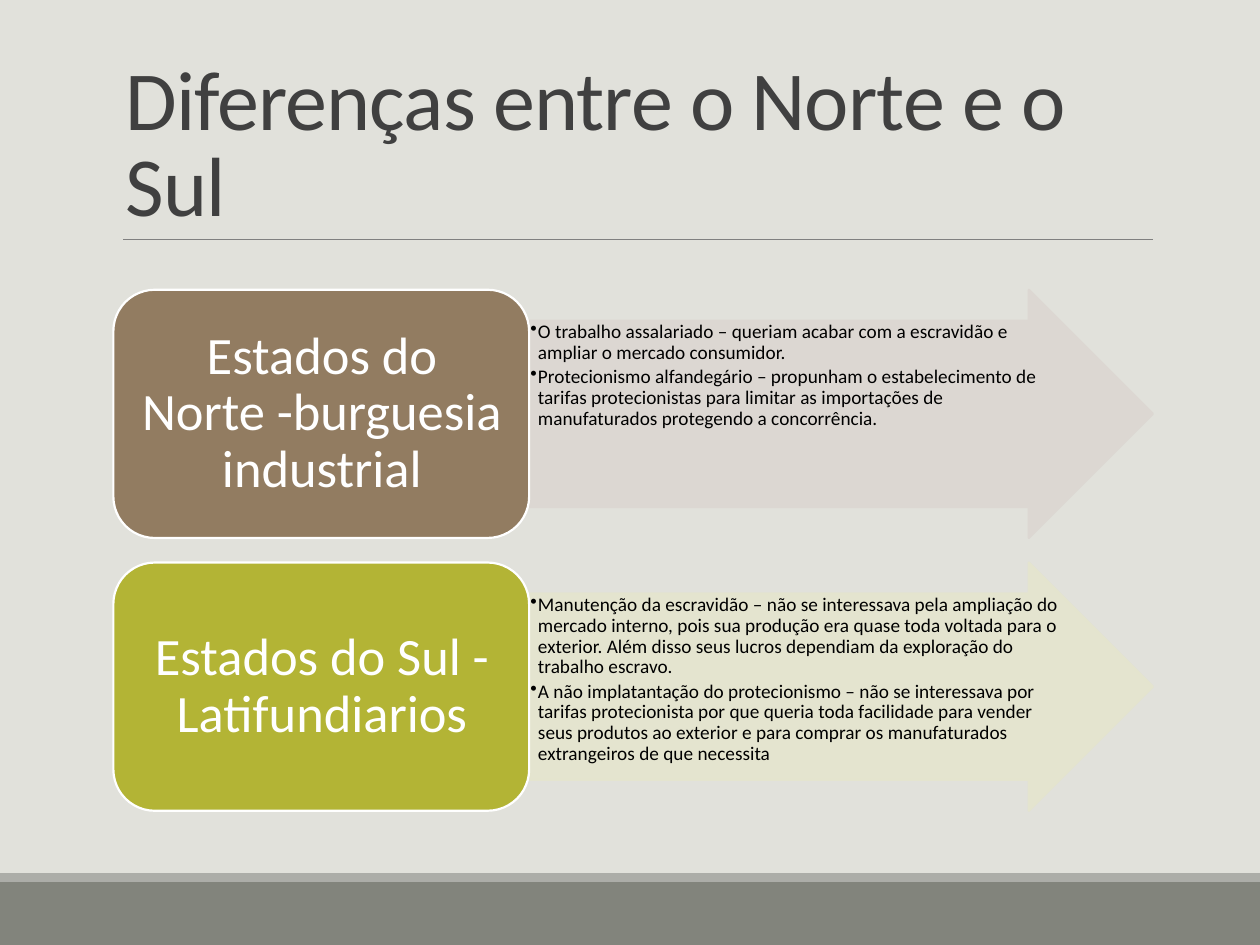
from dataclasses import dataclass
from typing import NamedTuple

from lxml.etree import SubElement
from pptx import Presentation
from pptx.dml.color import RGBColor
from pptx.enum.shapes import MSO_CONNECTOR, MSO_SHAPE
from pptx.enum.text import MSO_ANCHOR, PP_ALIGN
from pptx.oxml.ns import qn
from pptx.util import Inches, Pt

COLS, ROWS = 100, 75
WIDTH, HEIGHT = Inches(10), Inches(7.5)


class Box(NamedTuple):
    """Left, top, width and height in grid columns and rows."""
    left: float
    top: float
    wide: float
    high: float

    def emu(self) -> list[int]:
        x, y = WIDTH / COLS, HEIGHT / ROWS
        return [round(n * u) for n, u in zip(self, (x, y, x, y))]


@dataclass
class Style:
    size: float
    color: str
    inset: tuple[float, float]
    line: float
    after: float = 0
    align: PP_ALIGN = PP_ALIGN.LEFT
    anchor: MSO_ANCHOR = MSO_ANCHOR.TOP
    bullet: bool = False
    track: int = 0


@dataclass
class Side:
    name: str
    fill: str
    tint: str
    points: list[str]


TITLE = Style(48, "404040", (0.1, 0.05), 0.85, anchor=MSO_ANCHOR.BOTTOM, track=-50)
LABEL = Style(30, "FFFFFF", (0.12, 0.06), 0.9, align=PP_ALIGN.CENTER,
              anchor=MSO_ANCHOR.MIDDLE)
POINT = Style(11, "000000", (0.01, 0.01), 0.9, after=2, bullet=True)

SIDES = [
    Side("Estados do Norte -burguesia industrial", "927C61", "DCD7D2", [
        "O trabalho assalariado – queriam acabar com a escravidão e ampliar o "
        "mercado consumidor.",
        "Protecionismo alfandegário – propunham o estabelecimento de tarifas "
        "protecionistas para limitar as importações de manufaturados "
        "protegendo a concorrência.",
    ]),
    Side("Estados do Sul - Latifundiarios", "B3B435", "E5E5CE", [
        "Manutenção da escravidão – não se interessava pela ampliação do "
        "mercado interno, pois sua produção era quase toda voltada para o "
        "exterior. Além disso seus lucros dependiam da exploração do trabalho "
        "escravo.",
        "A não implatantação do protecionismo – não se interessava por tarifas "
        "protecionista por que queria toda facilidade para vender seus "
        "produtos ao exterior e para comprar os manufaturados extrangeiros de "
        "que necessita",
    ]),
]


def paint(target, color: str) -> None:
    """Give a fill one solid colour."""
    target.solid()
    target.fore_color.rgb = RGBColor.from_string(color)


def draw(slide, kind: MSO_SHAPE, box: Box, fill: str, edge: str = "",
         alpha: int = 100):
    """Add a shape; alpha is the opacity of fill and edge in percent."""
    shape = slide.shapes.add_shape(kind, *box.emu())
    shape.shadow.inherit = False
    paint(shape.fill, fill)
    if edge:
        paint(shape.line.fill, edge)
        shape.line.width = Pt(1.25)
    else:
        shape.line.fill.background()
    if alpha < 100:
        for node in shape._element.spPr.iter(qn("a:srgbClr")):
            SubElement(node, qn("a:alpha"), val=str(alpha * 1000))
    return shape


def write(slide, box: Box, texts: list[str], style: Style) -> None:
    frame = slide.shapes.add_textbox(*box.emu()).text_frame
    across, down = map(Inches, style.inset)
    form = {"word_wrap": True, "vertical_anchor": style.anchor,
            "margin_left": across, "margin_right": across,
            "margin_top": down, "margin_bottom": down}
    for key, value in form.items():
        setattr(frame, key, value)
    for i, text in enumerate(texts):
        para = frame.paragraphs[0] if i == 0 else frame.add_paragraph()
        form = {"alignment": style.align, "line_spacing": style.line,
                "space_after": Pt(style.after)}
        for key, value in form.items():
            setattr(para, key, value)
        run = para.add_run()
        run.text = text
        run.font.name, run.font.size = "Calibri", Pt(style.size)
        paint(run.font.fill, style.color)
        if style.track:
            run._r.get_or_add_rPr().set("spc", str(style.track))
        if style.bullet:
            props = para._p.get_or_add_pPr()
            props.set("marL", str(Inches(0.06)))
            props.set("indent", str(-Inches(0.06)))
            SubElement(props, qn("a:buChar"), char="•")


def rule(slide, left: float, right: float, top: float) -> None:
    x, y, wide, _ = Box(left, top, right - left, 0).emu()
    line = slide.shapes.add_connector(MSO_CONNECTOR.STRAIGHT, x, y, x + wide, y)
    paint(line.line.fill, "808080")
    line.line.width = Pt(0.5)
    SubElement(line._element.spPr, qn("a:effectLst"))


def band(slide, side: Side, top: float) -> None:
    """Draw one side: an arrow with its points and a rounded label."""
    high = 19.7
    arrow = draw(slide, MSO_SHAPE.RIGHT_ARROW, Box(42, top, 49.5, high),
                 side.tint, side.tint, 90)
    arrow.adjustments[0], arrow.adjustments[1] = 0.75, 0.5
    write(slide, Box(42, top + high / 8, 42.1, high * 0.75), side.points, POINT)
    draw(slide, MSO_SHAPE.ROUNDED_RECTANGLE, Box(9, top, 33, high),
         side.fill, "FFFFFF")
    write(slide, Box(10, top + 0.95, 31.1, high - 1.9), [side.name], LABEL)


def main() -> None:
    deck = Presentation()
    deck.slide_width, deck.slide_height = WIDTH, HEIGHT
    slide = deck.slides.add_slide(deck.slide_layouts[6])
    paint(slide.background.fill, "E1E1DB")
    draw(slide, MSO_SHAPE.RECTANGLE, Box(0, 70, COLS, 5), "82847C")
    draw(slide, MSO_SHAPE.RECTANGLE, Box(0, 69.3, COLS, 0.7), "ACADA8")
    rule(slide, 9.8, 91.5, 19)
    write(slide, Box(9, 3.1, 82.5, 15.9), ["Diferenças entre o Norte e o Sul"],
          TITLE)
    for i, side in enumerate(SIDES):
        band(slide, side, 23 + 21.65 * i)
    deck.save("out.pptx")


if __name__ == "__main__":
    main()
